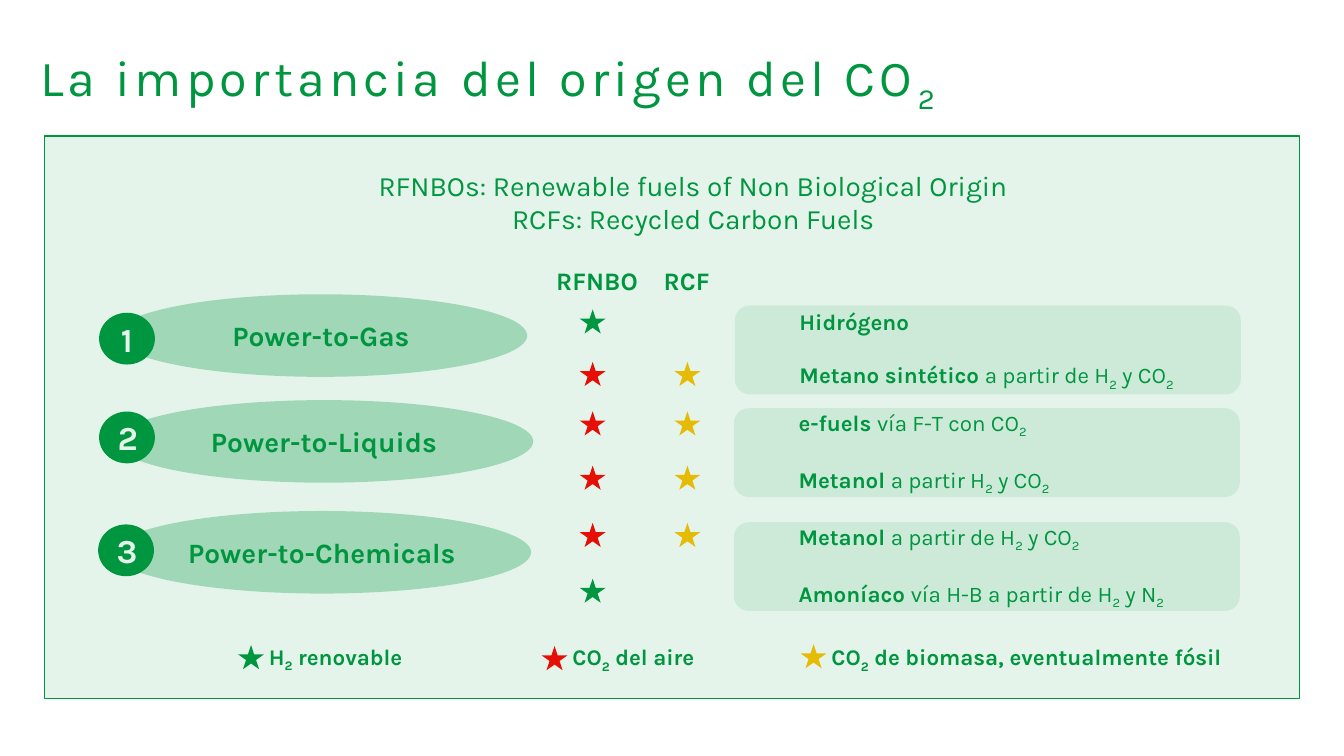
"""Build a slide on the origin of CO₂ in synthetic fuels."""
from lxml.etree import SubElement as Sub
from pptx import Presentation
from pptx.dml.color import RGBColor as RGB
from pptx.enum.shapes import MSO_SHAPE as Form
from pptx.enum.text import MSO_ANCHOR as Anchor, PP_ALIGN as Align
from pptx.oxml.ns import qn
from pptx.util import Pt

HUES = {"green": "009640", "red": "FF0000", "gold": "FFC000", "white": "FFFFFF"}


class Deck:
    def __init__(self, slide, font="Karla"):
        self.slide = slide
        self.font = font

    def fill(self, frame, lines, size, hue="green", align=Align.LEFT, indent=0, gap=0):
        frame.word_wrap = True
        for row, line in enumerate(lines):
            para = frame.paragraphs[0] if row == 0 else frame.add_paragraph()
            para.alignment = align
            if indent:
                para._p.get_or_add_pPr().set("marL", str(Pt(indent)))
            if row and gap:
                para.space_before = Pt(gap)
            for i, part in enumerate(line.split("*")):
                for j, bit in enumerate(part.split("_")):
                    if bit:
                        self.run(para, bit, size, hue, i % 2 == 1, j % 2 == 1)

    def run(self, para, text, size, hue, bold, low):
        run = para.add_run()
        run.text = text
        run.font.name = self.font
        run.font.size = Pt(size)
        run.font.bold = bold
        run.font.color.rgb = RGB.from_string(HUES[hue])
        if low:
            run._r.get_or_add_rPr().set("baseline", "-25000")

    def text(self, x, y, w, h, lines, size, **look):
        box = self.slide.shapes.add_textbox(Pt(x), Pt(y), Pt(w), Pt(h))
        self.fill(box.text_frame, lines, size, **look)
        return box.text_frame.paragraphs[0]

    def shape(self, form, x, y, w, h, hue="green", alpha=100, line=0):
        shape = self.slide.shapes.add_shape(form, Pt(x), Pt(y), Pt(w), Pt(h))
        shape.shadow.inherit = False
        shape.fill.solid()
        shape.fill.fore_color.rgb = RGB.from_string(HUES[hue])
        if alpha < 100:
            tint = shape._element.spPr.find(qn("a:solidFill"))[0]
            Sub(tint, qn("a:alpha")).set("val", str(alpha * 1000))
        if line:
            shape.line.color.rgb = RGB.from_string(HUES[hue])
            shape.line.width = Pt(line)
        else:
            shape.line.fill.background()
        shape.text_frame.vertical_anchor = Anchor.MIDDLE
        return shape.text_frame

    def star(self, x, y, hue):
        self.shape(Form.STAR_5_POINT, x, y, 18.7, 17.3, hue)

    def route(self, num, name, oval, disc, card, goods):
        x, y, w = oval
        frame = self.shape(Form.OVAL, x, y, w, 59, alpha=30)
        self.fill(frame, [f"*{name}*"], 20, align=Align.CENTER)
        frame = self.shape(Form.ROUNDED_RECTANGLE, *card, 361.4, 63.4, alpha=10)
        self.fill(frame, goods, 16, indent=36, gap=19)
        frame = self.shape(Form.OVAL, *disc, 38.9, 36, line=1)
        self.fill(frame, [f"*{num}*"], 24, hue="white", align=Align.CENTER)

    def key(self, x, y, w, dy, hue, label):
        self.text(x, y, w, 28.8, [f"*{label}*"], 16, indent=36)
        self.star(x + 21, y + dy, hue)


ROUTES = [
    ("Power-to-Gas", (82.1, 210.2, 294.5), (71.3, 223.9), (524.9, 218.2),
     ["*Hidrógeno*", "*Metano sintético *a partir de H_2_ y CO_2_"]),
    ("Power-to-Liquids", (82.1, 285.8, 298.8), (71.3, 294.5), (524.2, 291.6),
     ["*e-fuels *vía F-T con CO_2_", "*Metanol *a partir H_2_ y CO_2_"]),
    ("Power-to-Chemicals", (80.6, 365, 298.8), (70.6, 375.1), (524.2, 373),
     ["*Metanol *a partir de H_2_ y CO_2_", "*Amoníaco *vía H-B a partir de H_2_ y N_2_"]),
]
MARKS = [
    (221, ["green"]),
    (258.5, ["red", "gold"]),
    (293.8, ["red", "gold"]),
    (332.6, ["red", "gold"]),
    (373.5, ["red", "gold"]),
    (413.3, ["green"]),
]
KEYS = [
    (149, 455.5, 217.4, 5.3, "green", "H_2_ renovable"),
    (365.8, 456, 217.4, 5.5, "red", "CO_2_ del aire"),
    (550.8, 456, 349.2, 4.1, "gold", "CO_2_ de biomasa, eventualmente fósil"),
]


def main():
    show = Presentation()
    show.slide_width, show.slide_height = Pt(960), Pt(540)
    deck = Deck(show.slides.add_slide(show.slide_layouts[6]))

    title = deck.text(21.6, 29.5, 784, 51, ["La importancia del origen del CO_2_"], 36)
    for run in title.runs:
        run._r.get_or_add_rPr().set("spc", "300")
    deck.text(83, 116.6, 824.4, 55.4,
              ["RFNBOs: Renewable fuels of Non Biological Origin",
               "RCFs: Recycled Carbon Fuels"], 20, align=Align.CENTER)

    for num, route in enumerate(ROUTES, 1):
        deck.route(num, *route)

    head = deck.text(390.2, 185.8, 144, 28.8, ["*RFNBO\tRCF*"], 18)
    stops = Sub(head._p.get_or_add_pPr(), qn("a:tabLst"))
    Sub(stops, qn("a:tab"), pos=str(Pt(76.8)), algn="l")
    for y, hues in MARKS:
        for col, hue in enumerate(hues):
            deck.star(414 + col * 67.7, y, hue)
    for key in KEYS:
        deck.key(*key)

    deck.shape(Form.RECTANGLE, 31.7, 97.2, 896.4, 401.8, alpha=10, line=1)
    show.save("out.pptx")


if __name__ == "__main__":
    main()
